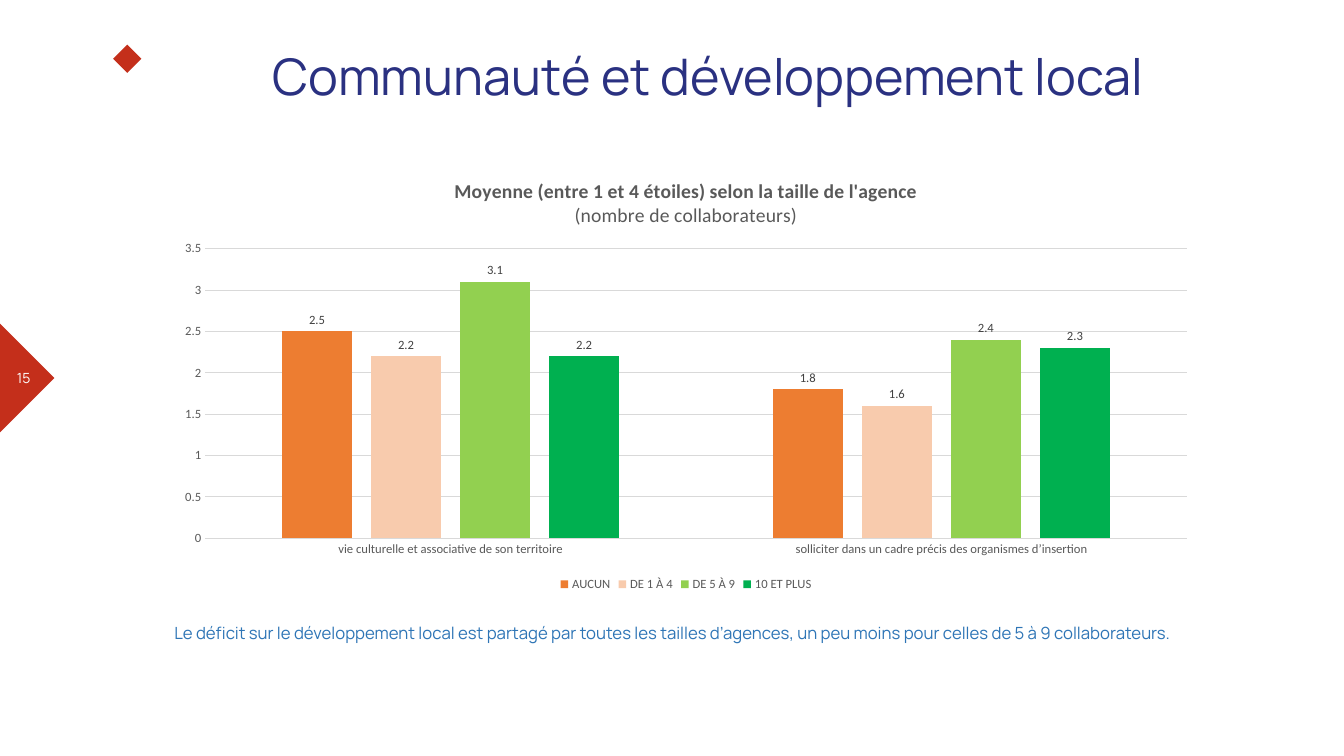
import dataclasses

import pptx
import pptx.chart.data
import pptx.dml.color
import pptx.enum.chart
import pptx.enum.shapes
import pptx.enum.text
import pptx.util

Pt = pptx.util.Pt
Align = pptx.enum.text.PP_ALIGN
Anchor = pptx.enum.text.MSO_ANCHOR
Preset = pptx.enum.shapes.MSO_SHAPE


@dataclasses.dataclass(frozen=True)
class Theme:
    heading_font: str = "Manrope"
    chart_font: str = "Calibri"
    accent: str = "C42F1B"
    title: str = "2A3181"
    note: str = "2E75B6"
    white: str = "FFFFFF"
    black: str = "000000"
    chart_text: str = "595959"
    label: str = "404040"
    grid: str = "D9D9D9"
    title_size: int = 36
    chart_title_size: int = 14
    note_size: int = 12
    number_size: int = 10
    chart_size: int = 10
    axis_size: int = 9


@dataclasses.dataclass(frozen=True)
class Box:
    left: float
    top: float
    width: float
    height: float

    def lengths(self):
        return Pt(self.left), Pt(self.top), Pt(self.width), Pt(self.height)


THEME = Theme()
CATEGORIES = [
    "vie culturelle et associative de son territoire",
    "solliciter dans un cadre précis des organismes d’insertion",
]
AGENCY_SIZES = [
    ("AUCUN", (2.5, 1.8), "ED7D31"),
    ("DE 1 À 4", (2.2, 1.6), "F8CBAD"),
    ("DE 5 À 9", (3.1, 2.4), "92D050"),
    ("10 ET PLUS", (2.2, 2.3), "00B050"),
]


def rgb(color):
    return pptx.dml.color.RGBColor.from_string(color)


def style_font(font, name, size, color, bold=False):
    font.name = name
    font.size = Pt(size)
    font.color.rgb = rgb(color)
    font.bold = bold


def write_text(shape, text, size, color, alignment):
    text_frame = shape.text_frame
    text_frame.word_wrap = True
    text_frame.text = text
    paragraph = text_frame.paragraphs[0]
    paragraph.alignment = alignment
    style_font(paragraph.runs[0].font, THEME.heading_font, size, color)


def add_accent(slide, preset, box):
    shape = slide.shapes.add_shape(preset, *box.lengths())
    shape.shadow.inherit = False
    shape.fill.solid()
    shape.fill.fore_color.rgb = rgb(THEME.accent)
    shape.line.fill.background()
    return shape


def add_page_marker(slide, box, number):
    side = box.height * 1.87
    center = box.top + box.height / 2
    triangle = add_accent(
        slide, Preset.RIGHT_TRIANGLE, Box(-side / 2 - 0.8, center - side / 2, side, side)
    )
    triangle.rotation = 225
    number_box = slide.shapes.add_textbox(*box.lengths())
    write_text(number_box, number, THEME.number_size, THEME.white, Align.CENTER)
    number_box.text_frame.vertical_anchor = Anchor.MIDDLE


def place_title(slide, box, text):
    diamond_side = 20.2
    add_accent(
        slide, Preset.DIAMOND, Box(box.left - 29.4, box.top - 0.6, diamond_side, diamond_side)
    )
    title = slide.shapes.title
    title.left, title.top, title.width, title.height = Box(
        box.left, box.top, box.width, box.height
    ).lengths()
    write_text(title, text, THEME.title_size, THEME.title, Align.CENTER)
    text_frame = title.text_frame
    text_frame.auto_size = pptx.enum.text.MSO_AUTO_SIZE.NONE
    text_frame.vertical_anchor = Anchor.TOP
    text_frame.margin_left = text_frame.margin_right = 0
    text_frame.margin_top = text_frame.margin_bottom = 0


def add_note(slide, box, text):
    note = slide.shapes.add_textbox(*box.lengths())
    write_text(note, text, THEME.note_size, THEME.note, Align.LEFT)


def style_chart_title(chart, lines):
    text_frame = chart.chart_title.text_frame
    text_frame.text = "\n".join(lines)
    for index, paragraph in enumerate(text_frame.paragraphs):
        for font in (paragraph.font, paragraph.runs[0].font):
            style_font(
                font, THEME.chart_font, THEME.chart_title_size, THEME.chart_text, index == 0
            )


def style_axes(chart):
    for axis in (chart.category_axis, chart.value_axis):
        axis.major_tick_mark = pptx.enum.chart.XL_TICK_MARK.NONE
        axis.minor_tick_mark = pptx.enum.chart.XL_TICK_MARK.NONE
        style_font(axis.tick_labels.font, THEME.chart_font, THEME.axis_size, THEME.chart_text)
    value_axis = chart.value_axis
    value_axis.minimum_scale, value_axis.maximum_scale = 0, 3.5
    value_axis.major_unit = 0.5
    value_axis.has_major_gridlines = True
    value_axis.format.line.fill.background()
    for line in (chart.category_axis.format.line, value_axis.major_gridlines.format.line):
        line.color.rgb = rgb(THEME.grid)
        line.width = Pt(0.75)


def style_series(series, color):
    series.format.fill.solid()
    series.format.fill.fore_color.rgb = rgb(color)
    series.invert_if_negative = False
    labels = series.data_labels
    labels.show_value = True
    labels.position = pptx.enum.chart.XL_LABEL_POSITION.OUTSIDE_END
    style_font(labels.font, THEME.chart_font, THEME.axis_size, THEME.label)


def add_rating_chart(slide, box):
    data = pptx.chart.data.CategoryChartData()
    data.categories = CATEGORIES
    for name, values, _ in AGENCY_SIZES:
        data.add_series(name, values)
    chart = slide.shapes.add_chart(
        pptx.enum.chart.XL_CHART_TYPE.COLUMN_CLUSTERED, *box.lengths(), data
    ).chart
    style_font(chart.font, THEME.chart_font, THEME.chart_size, THEME.black)
    style_chart_title(
        chart,
        ["Moyenne (entre 1 et 4 étoiles) selon la taille de l'agence",
         "(nombre de collaborateurs)"],
    )
    style_axes(chart)
    plot = chart.plots[0]
    plot.gap_width, plot.overlap = 219, -27
    plot.vary_by_categories = False
    for series, (_, _, color) in zip(plot.series, AGENCY_SIZES):
        style_series(series, color)
    chart.has_legend = True
    chart.legend.position = pptx.enum.chart.XL_LEGEND_POSITION.BOTTOM
    chart.legend.include_in_layout = False
    style_font(chart.legend.font, THEME.chart_font, THEME.axis_size, THEME.chart_text)


def main():
    presentation = pptx.Presentation()
    presentation.slide_width, presentation.slide_height = Pt(960), Pt(540)
    slide = presentation.slides.add_slide(presentation.slide_layouts[5])
    add_page_marker(slide, Box(-0.7, 255, 35.3, 30), "15")
    place_title(slide, Box(110.2, 32.4, 791.3, 44.6), "Communauté et développement local")
    add_note(
        slide,
        Box(117.4, 441.4, 776.9, 36),
        "Le déficit sur le développement local est partagé par toutes les tailles d’agences, "
        "un peu moins pour celles de 5 à 9 collaborateurs.",
    )
    add_rating_chart(slide, Box(117.4, 114.5, 745.2, 311))
    presentation.save("out.pptx")


if __name__ == "__main__":
    main()
